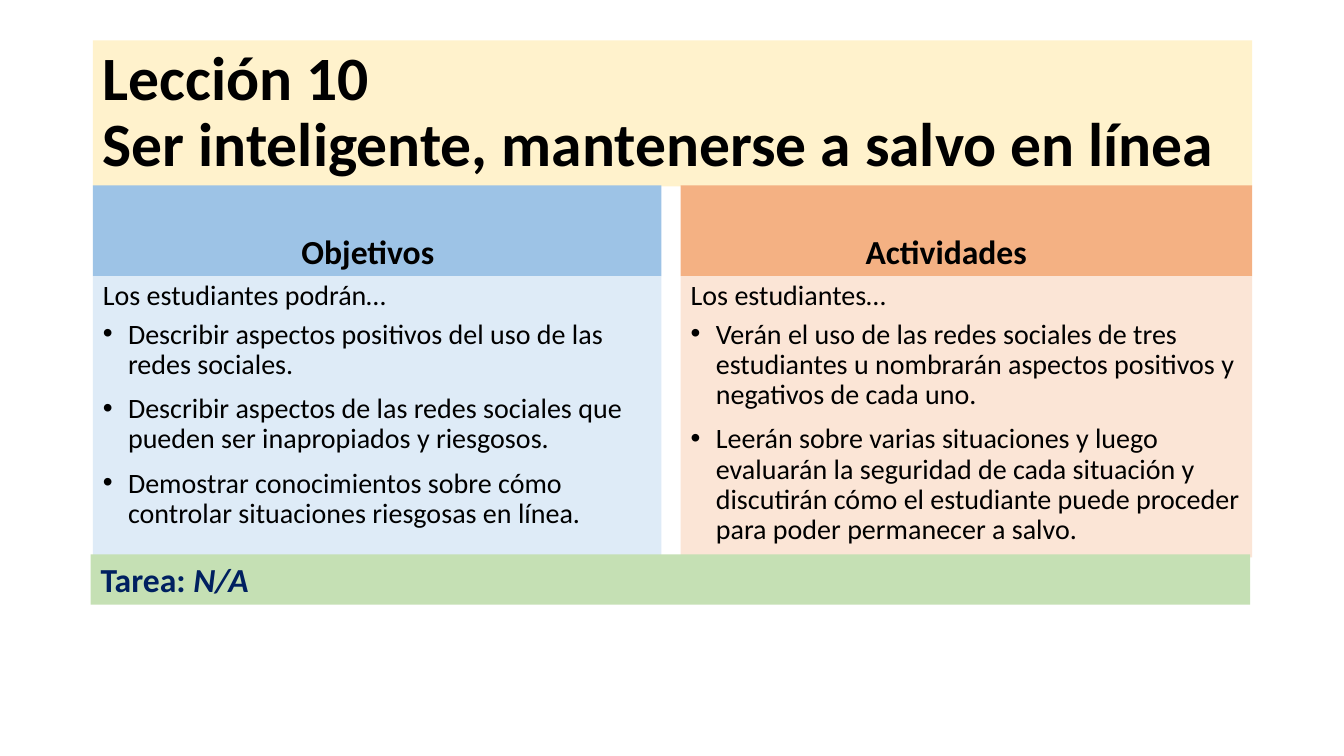
from lxml.etree import SubElement
from pptx import Presentation
from pptx.dml.color import RGBColor
from pptx.enum.text import MSO_ANCHOR, MSO_AUTO_SIZE, PP_ALIGN
from pptx.oxml.ns import qn
from pptx.util import Inches, Pt

BLACK = RGBColor(0x00, 0x00, 0x00)
NAVY = RGBColor(0x00, 0x20, 0x60)
CREAM = RGBColor(0xFF, 0xF2, 0xCC)
BLUE = RGBColor(0x9D, 0xC3, 0xE6)
PALE_BLUE = RGBColor(0xDE, 0xEB, 0xF7)
ORANGE = RGBColor(0xF4, 0xB1, 0x83)
PALE_ORANGE = RGBColor(0xFB, 0xE5, 0xD6)
GREEN = RGBColor(0xC5, 0xE0, 0xB4)

LESSON = "Lección 10\nSer inteligente, mantenerse a salvo en línea"
COLUMNS = [
    {"heading": "Objetivos\t", "intro": "Los estudiantes podrán…",
     "points": ["Describir aspectos positivos del uso de las redes sociales.",
                "Describir aspectos de las redes sociales que pueden ser inapropiados y riesgosos.",
                "Demostrar conocimientos sobre cómo controlar situaciones riesgosas en línea."],
     "fills": (BLUE, PALE_BLUE), "width": 5.64},
    {"heading": "Actividades\t", "intro": "Los estudiantes…",
     "points": ["Verán el uso de las redes sociales de tres estudiantes u nombrarán aspectos "
                "positivos y negativos de cada uno.",
                "Leerán sobre varias situaciones y luego evaluarán la seguridad de cada situación "
                "y discutirán cómo el estudiante puede proceder para poder permanecer a salvo."],
     "fills": (ORANGE, PALE_ORANGE), "width": 5.67},
]
HOMEWORK = [("Tarea: ", False), ("N/A", True)]

LEFT, WIDTH, GUTTER = 0.92, 11.5, 0.19
TITLE_TOP, TITLE_HEIGHT = 0.4, 1.45
HEADING_TOP, HEADING_HEIGHT, LIST_HEIGHT = 1.84, 0.9, 2.79
LIST_TOP = HEADING_TOP + HEADING_HEIGHT
HOMEWORK_BOX = (0.9, 5.5, WIDTH, 0.5)
INDENT = 0.25

TITLE_FONT = {"name": "Calibri", "size": Pt(44), "bold": True}
HEADING_FONT = {"name": "Calibri", "size": Pt(24), "bold": True}
LIST_FONT = {"name": "Calibri", "size": Pt(20), "bold": False}


def apply(target, values):
    for key, value in values.items():
        setattr(target, key, value)


def place(panel, box, fill, anchor):
    apply(panel, dict(zip(("left", "top", "width", "height"), map(Inches, box))))
    panel.fill.solid()
    panel.fill.fore_color.rgb = fill
    apply(panel.text_frame, {"word_wrap": True, "auto_size": MSO_AUTO_SIZE.NONE,
                             "vertical_anchor": anchor})
    return panel.text_frame


def style(paragraph, font, color=BLACK, align=PP_ALIGN.LEFT, spacing=0.9, before=0):
    apply(paragraph, {"alignment": align, "line_spacing": spacing,
                      "space_before": Pt(before), "space_after": Pt(0)})
    for run in paragraph.runs:
        apply(run.font, font)
        run.font.color.rgb = color


def set_bullet(paragraph, bullet):
    properties = paragraph._p.get_or_add_pPr()
    indent = Inches(INDENT) if bullet else 0
    properties.set("marL", str(indent))
    properties.set("indent", str(-indent))
    if bullet:
        SubElement(properties, qn("a:buFont"), typeface="Arial")
        SubElement(properties, qn("a:buChar"), char="•")
    else:
        SubElement(properties, qn("a:buNone"))


def add_column(column, left, heading, listing):
    heading_fill, list_fill = column["fills"]
    width = column["width"]
    text = place(heading, (left, HEADING_TOP, width, HEADING_HEIGHT),
                 heading_fill, MSO_ANCHOR.BOTTOM)
    text.paragraphs[0].text = column["heading"]
    style(text.paragraphs[0], HEADING_FONT, align=PP_ALIGN.CENTER, spacing=1.0)

    text = place(listing, (left, LIST_TOP, width, LIST_HEIGHT), list_fill, MSO_ANCHOR.TOP)
    lines = [column["intro"], *column["points"]]
    text.text = "\n".join(lines)
    for number, paragraph in enumerate(text.paragraphs):
        style(paragraph, LIST_FONT, before=6 if number == 1 else 10)
        set_bullet(paragraph, number > 0)


def main():
    deck = Presentation()
    deck.slide_width, deck.slide_height = Inches(13.33), Inches(7.5)
    slide = deck.slides.add_slide(deck.slide_layouts.get_by_name("Comparison"))
    title, *panels = slide.placeholders

    text = place(title, (LEFT, TITLE_TOP, WIDTH, TITLE_HEIGHT), CREAM, MSO_ANCHOR.MIDDLE)
    text.paragraphs[0].text = LESSON
    style(text.paragraphs[0], TITLE_FONT)

    left = LEFT
    for column, heading, listing in zip(COLUMNS, panels[::2], panels[1::2]):
        add_column(column, left, heading, listing)
        left += column["width"] + GUTTER

    homework = slide.shapes.add_textbox(0, 0, 0, 0)
    text = place(homework, HOMEWORK_BOX, GREEN, MSO_ANCHOR.TOP)
    for words, italic in HOMEWORK:
        run = text.paragraphs[0].add_run()
        run.text = words
        run.font.italic = italic
    style(text.paragraphs[0], HEADING_FONT, NAVY, spacing=1.0)

    deck.save("out.pptx")


if __name__ == "__main__":
    main()
